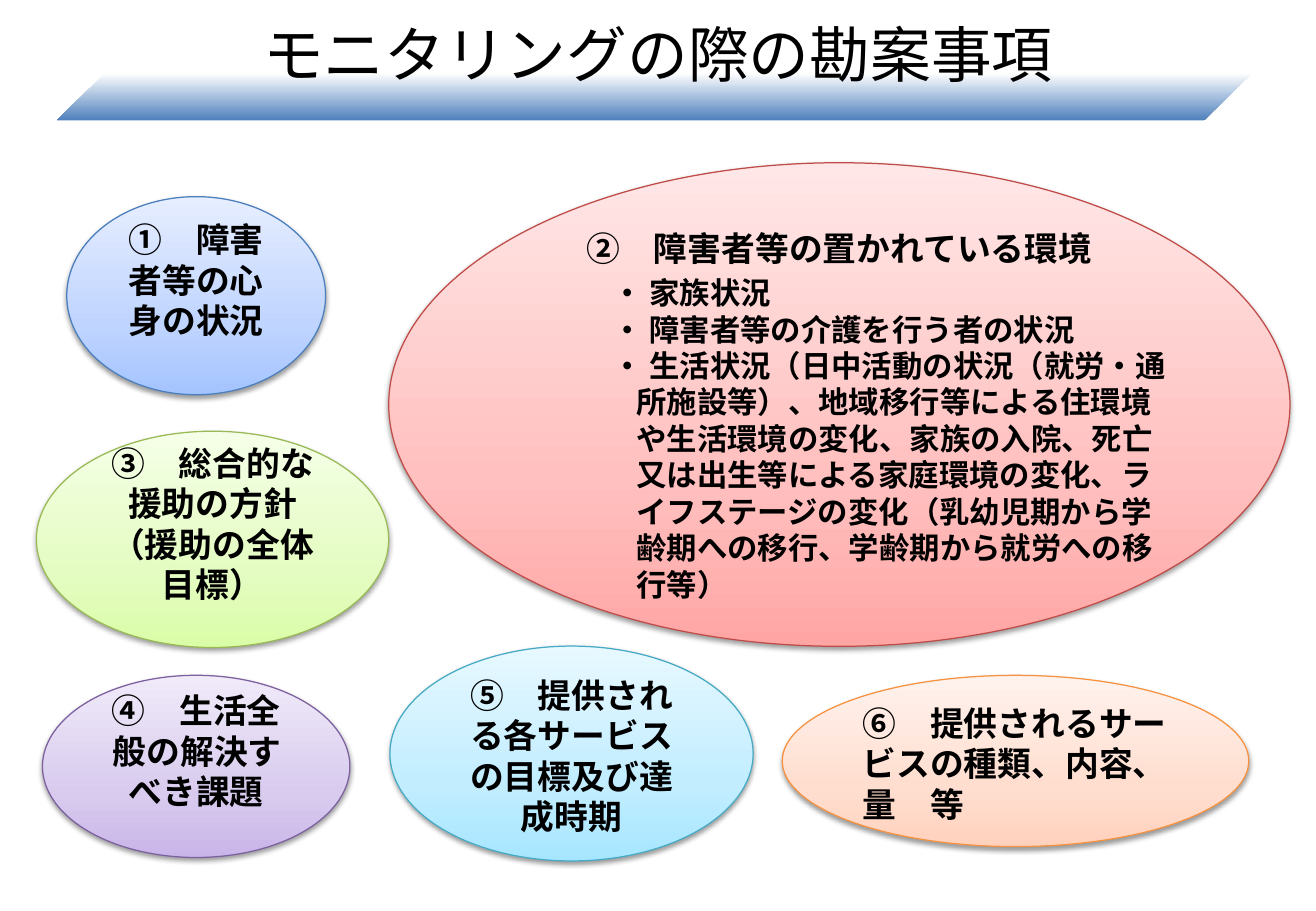
from lxml.etree import SubElement
from pptx import Presentation
from pptx.dml.color import RGBColor
from pptx.enum.shapes import MSO_SHAPE
from pptx.enum.text import MSO_ANCHOR, PP_ALIGN
from pptx.oxml.ns import qn
from pptx.util import Pt

SANS = "Noto Sans CJK JP"
TINTS = {  # dark, middle and light fill, then line
    "blue": ("A4C4FF", "BFD4FF", "E6EEFF", "4B7EBC"),
    "red": ("FFA6A5", "FFC0BF", "FFE7E7", "BF4C48"),
    "green": ("DAFDA7", "E4FCC2", "F5FFE7", "98B955"),
    "purple": ("C9B5E8", "D8CBEE", "F0EAF9", "7D60A0"),
    "aqua": ("A7E6FF", "C1EDFF", "E7F8FF", "46AAC5"),
    "orange": ("FFD2BD", "FFDED0", "FFF2ED", "F69240"),
}
COLORS = {"text": "000000", "shade": "000000", "white": "FFFFFF", "band": "4F81BD"}

# Format values
HEAD = {"size": Pt(36), "bold": False, "name": SANS}
LABEL = {"size": Pt(20), "bold": True, "name": "Arial"}
ITEM = {"size": Pt(18), "bold": True, "name": SANS}
MID, LEFT = PP_ALIGN.CENTER, PP_ALIGN.LEFT

# Tint, box, extra bottom inset, alignment, text
OVALS = [
    ("blue", (39.6, 116.6, 153.4, 117.4), 21, MID, "①　障害者等の心身の状況"),
    ("red", (230.4, 96.5, 534.2, 286.6), 188, MID, "②　障害者等の置かれている環境"),
    ("green", (21.6, 255.6, 208.8, 128.2), 21, MID,
     "③　総合的な援助の方針（援助の全体目標）"),
    ("purple", (25.2, 400.3, 182.2, 108), 21, MID, "④　生活全般の解決すべき課題"),
    ("aqua", (231.1, 383, 215.3, 127.4), 0, MID,
     "⑤　提供される各サービスの目標及び達成時期"),
    ("orange", (463.7, 400.3, 276.5, 101.5), 0, LEFT,
     "⑥　提供されるサービスの種類、内容、量　等"),
]
ITEMS = [
    "・ 家族状況",
    "・ 障害者等の介護を行う者の状況",
    "・ 生活状況（日中活動の状況（就労・通所施設等）、地域移行等による住環境や"
    "生活環境の変化、家族の入院、死亡又は出生等による家庭環境の変化、"
    "ライフステージの変化（乳幼児期から学齢期への移行、学齢期から就労への移行等）",
]


def points(box):
    return [Pt(n) for n in box]


def set_all(target, values):
    for name, value in values.items():
        setattr(target, name, value)


def write(para, text, style, align, pitch=None):
    set_all(para, {"alignment": align, "line_spacing": pitch})
    run = para.add_run()
    run.text = text
    set_all(run.font, style)
    run.font.color.rgb = RGBColor.from_string(COLORS["text"])
    SubElement(run.font._element, qn("a:ea"), typeface=SANS)


def shade(shape, stops, angle):
    shape.fill.gradient()
    shape.fill.gradient_angle = angle
    group = shape._element.spPr.find(qn("a:gradFill")).find(qn("a:gsLst"))
    for old in list(group):
        group.remove(old)
    for place, color in stops:
        stop = SubElement(group, qn("a:gs"), pos=str(place * 1000))
        SubElement(stop, qn("a:srgbClr"), val=color)


def drop_shadow(shape):
    effects = shape._element.spPr.find(qn("a:effectLst"))
    outer = SubElement(effects, qn("a:outerShdw"), blurRad=str(Pt(3.1)),
                       dist=str(Pt(1.6)), dir="5400000", rotWithShape="0")
    color = SubElement(outer, qn("a:srgbClr"), val=COLORS["shade"])
    SubElement(color, qn("a:alpha"), val="38000")


def add_band(slide):
    band = slide.shapes.add_shape(
        MSO_SHAPE.PARALLELOGRAM, *points((33.8, 43.2, 708.5, 28.1)))
    band.adjustments[0] = 1.025
    shade(band, [(0, COLORS["white"]), (100, COLORS["band"])], 270)
    band.line.fill.background()
    band.shadow.inherit = False


def add_oval(slide, tint, box, extra, align, text):
    oval = slide.shapes.add_shape(MSO_SHAPE.OVAL, *points(box))
    *fills, edge = TINTS[tint]
    shade(oval, list(zip((0, 35, 100), fills)), 90)
    oval.line.color.rgb = RGBColor.from_string(edge)
    oval.line.width = Pt(0.75)
    oval.shadow.inherit = False
    drop_shadow(oval)
    frame = oval.text_frame
    set_all(frame, {"word_wrap": True, "vertical_anchor": MSO_ANCHOR.MIDDLE,
                    "margin_top": Pt(6), "margin_bottom": Pt(3.6 + extra)})
    write(frame.paragraphs[0], text, LABEL, align, Pt(24))


def add_text(slide, box, lines, style, align, anchor, pitch=None):
    frame = slide.shapes.add_textbox(*points(box)).text_frame
    set_all(frame, {"word_wrap": True, "vertical_anchor": anchor})
    for i, line in enumerate(lines):
        para = frame.add_paragraph() if i else frame.paragraphs[0]
        write(para, line, style, align, pitch)
    return frame


def main():
    deck = Presentation()
    set_all(deck, {"slide_width": Pt(780), "slide_height": Pt(540)})
    slide = deck.slides.add_slide(deck.slide_layouts[6])

    # Title on its band
    add_band(slide)
    add_text(slide, (38.9, -13.7, 702, 90), ["モニタリングの際の勘案事項"],
             HEAD, MID, MSO_ANCHOR.MIDDLE)

    # Six points to consider
    for oval in OVALS:
        add_oval(slide, *oval)

    # Details of the second point, the last with a hanging indent
    frame = add_text(slide, (355.7, 159, 351.4, 181.4), ITEMS, ITEM, LEFT,
                     MSO_ANCHOR.TOP, Pt(21.6))
    props = frame.paragraphs[-1]._p.get_or_add_pPr()
    props.set("marL", str(Pt(14.4)))
    props.set("indent", str(Pt(-14.4)))

    deck.save("out.pptx")


if __name__ == "__main__":
    main()
